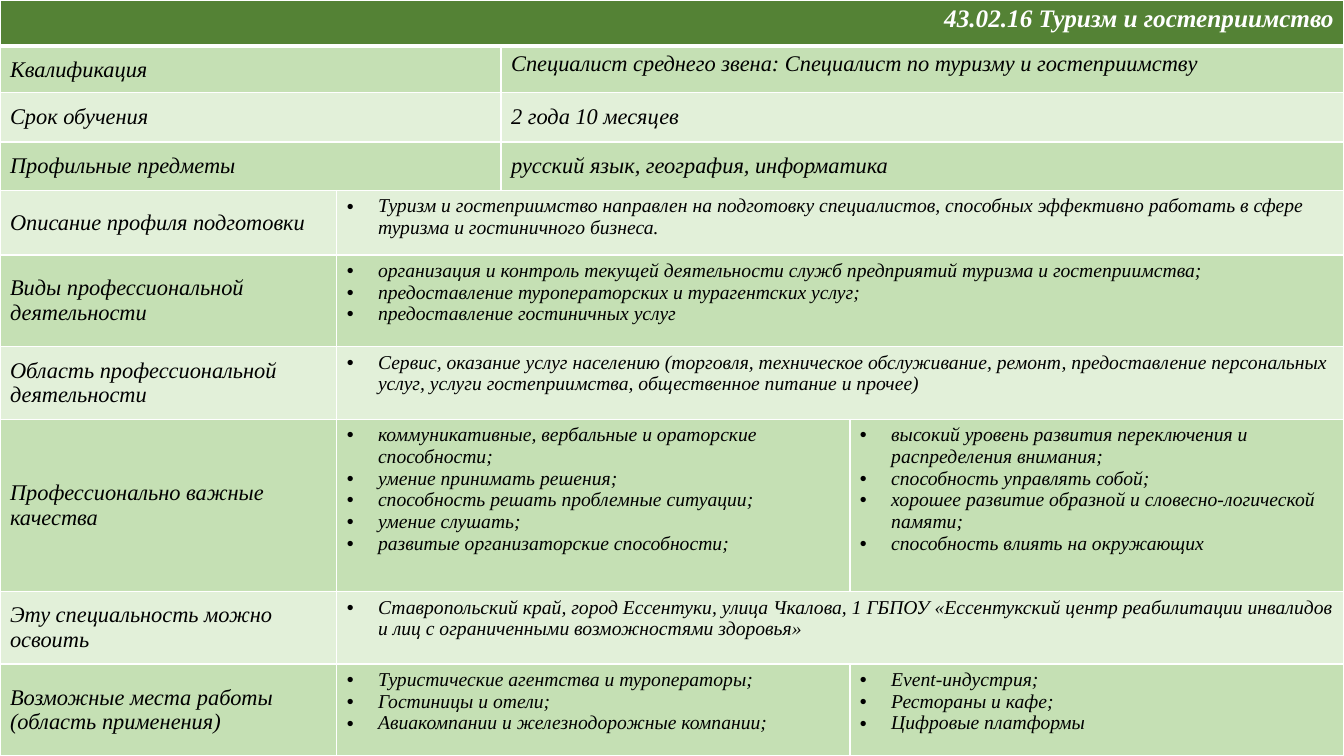
from lxml import etree
from pptx import Presentation
from pptx.dml.color import RGBColor
from pptx.enum import text
from pptx.oxml.ns import qn
from pptx.util import Inches, Pt

COLORS = {"header": "548235", "dark": "C5E0B4", "light": "E2F0D9",
          "white": "FFFFFF", "black": "000000"}
FONT = "Times New Roman"
COLS = [3.34, 1.63, 3.46, 4.9]
ROWS = [0.46, 0.46, 0.49, 0.48, 0.64, 0.91, 0.72, 1.71, 0.72, 0.91]

# Short facts: label and value, each over two columns
FACTS = [
    ("Квалификация", "Специалист среднего звена: Специалист по туризму и гостеприимству"),
    ("Срок обучения", "2 года 10 месяцев"),
    ("Профильные предметы", "русский язык, география, информатика"),
]

# Details: label, then one or two bulleted lists
DETAILS = [
    ("Описание профиля подготовки",
     ["Туризм и гостеприимство направлен на подготовку специалистов, способных "
      "эффективно работать в сфере туризма и гостиничного бизнеса."]),
    ("Виды профессиональной деятельности",
     ["организация и контроль текущей деятельности служб предприятий туризма и гостеприимства;",
      "предоставление туроператорских и турагентских услуг;",
      "предоставление гостиничных услуг"]),
    ("Область профессиональной деятельности",
     ["Сервис, оказание услуг населению (торговля, техническое обслуживание, ремонт, "
      "предоставление персональных услуг, услуги гостеприимства, общественное питание и прочее)"]),
    ("Профессионально важные качества",
     ["коммуникативные, вербальные и ораторские способности;",
      "умение принимать решения;",
      "способность решать проблемные ситуации;",
      "умение слушать;",
      "развитые организаторские способности;"],
     ["высокий уровень развития переключения и распределения внимания;",
      "способность управлять собой;",
      "хорошее развитие образной и словесно-логической памяти;",
      "способность влиять на окружающих"]),
    ("Эту специальность можно освоить",
     ["Ставропольский край, город Ессентуки, улица Чкалова, 1 ГБПОУ «Ессентукский центр "
      "реабилитации инвалидов и лиц с ограниченными возможностями здоровья»"]),
    ("Возможные места работы (область применения)",
     ["Туристические агентства и туроператоры;",
      "Гостиницы и отели;",
      "Авиакомпании и железнодорожные компании;"],
     ["Event-индустрия;", "Рестораны и кафе;", "Цифровые платформы"]),
]


def style_cell(cell, row):
    """Give a cell its white borders and the fill of its row."""
    tcPr = cell._tc.get_or_add_tcPr()
    for side in "LRTB":
        thick = (row, side) in ((0, "B"), (1, "T"))
        ln = etree.SubElement(tcPr, qn(f"a:ln{side}"), w=str(Pt(3 if thick else 1)))
        fill = etree.SubElement(ln, qn("a:solidFill"))
        etree.SubElement(fill, qn("a:srgbClr"), val=COLORS["white"])
    name = "header" if row == 0 else "dark" if row % 2 else "light"
    cell.fill.solid()
    cell.fill.fore_color.rgb = RGBColor.from_string(COLORS[name])


def write_cell(row, first, last, lines, size=16, middle=False, bullets=False):
    """Merge columns first to last of a row and write one paragraph per line."""
    cell = table.cell(row, first)
    if last > first:
        cell.merge(table.cell(row, last))
    if middle:
        cell.vertical_anchor = text.MSO_ANCHOR.MIDDLE
    tf = cell.text_frame
    tf.text = "\n".join(lines)
    for p in tf.paragraphs:
        if bullets:
            pPr = p._p.get_or_add_pPr()
            pPr.set("marL", str(Inches(0.31)))
            pPr.set("indent", str(Inches(-0.31)))
            etree.SubElement(pPr, qn("a:buFont"), typeface="Arial")
            etree.SubElement(pPr, qn("a:buChar"), char="•")
        if row == 0:
            p.alignment = text.PP_ALIGN.RIGHT
        for r in p.runs:
            r.font.name = FONT
            r.font.size = Pt(size)
            r.font.italic = True
            r.font.bold = row == 0
            r.font.color.rgb = RGBColor.from_string(COLORS["black" if row else "white"])


prs = Presentation()
prs.slide_width, prs.slide_height = Inches(13.33), Inches(7.5)
s = prs.slides.add_slide(prs.slide_layouts[6])

table = s.shapes.add_table(len(ROWS), len(COLS), 0, 0,
                           prs.slide_width, prs.slide_height).table
for column, width in zip(table.columns, COLS):
    column.width = Inches(width)
for i, height in enumerate(ROWS):
    table.rows[i].height = Inches(height)
    for cell in table.rows[i].cells:
        style_cell(cell, i)

write_cell(0, 0, 3, ["43.02.16 Туризм и гостеприимство"], size=18)

for i, (label, value) in enumerate(FACTS, start=1):
    write_cell(i, 0, 1, [label], middle=True)
    write_cell(i, 2, 3, [value], middle=i > 1)

for i, (label, *lists) in enumerate(DETAILS, start=1 + len(FACTS)):
    write_cell(i, 0, 0, [label], middle=True)
    spans = [(1, 3)] if len(lists) == 1 else [(1, 2), (3, 3)]
    for (first, last), lines in zip(spans, lists):
        write_cell(i, first, last, lines, size=14, bullets=True)

prs.save("out.pptx")
